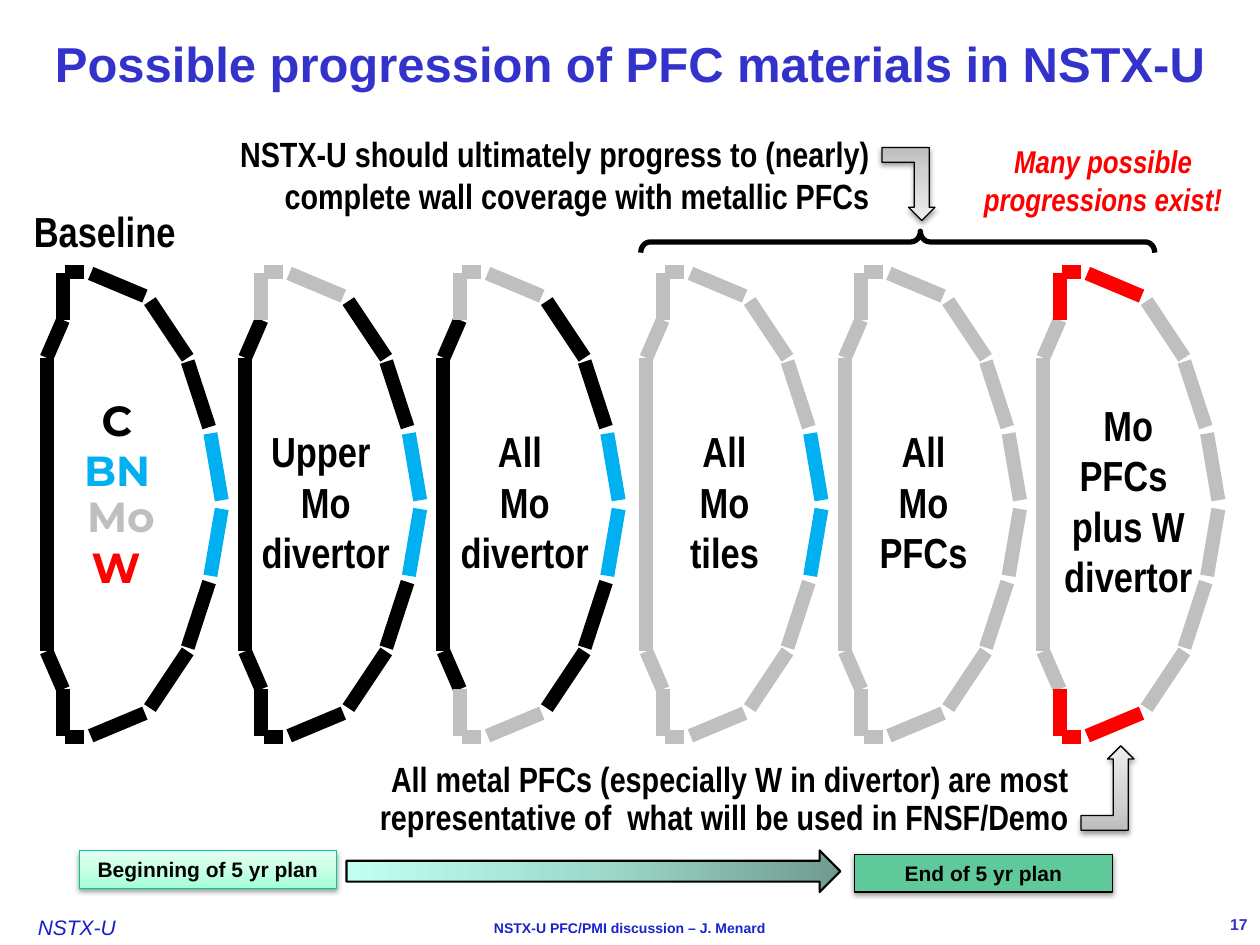
from dataclasses import dataclass

from lxml import etree
from pptx import Presentation
from pptx.dml.color import RGBColor
from pptx.enum.shapes import MSO_CONNECTOR, MSO_SHAPE
from pptx.enum.text import MSO_ANCHOR, PP_ALIGN
from pptx.oxml.ns import qn
from pptx.util import Inches, Pt

LEFT, CENTER, RIGHT = PP_ALIGN.LEFT, PP_ALIGN.CENTER, PP_ALIGN.RIGHT
TOP, MIDDLE = MSO_ANCHOR.TOP, MSO_ANCHOR.MIDDLE
STRAIGHT = MSO_CONNECTOR.STRAIGHT
BENT_ARROW, BRACE = MSO_SHAPE.BENT_UP_ARROW, MSO_SHAPE.RIGHT_BRACE
RECTANGLE, RIGHT_ARROW = MSO_SHAPE.RECTANGLE, MSO_SHAPE.RIGHT_ARROW

BLACK, GRAY, CYAN, RED = "000000", "BFBFBF", "00B0F0", "FF0000"
NARROW, SANS, GEOMETRIC = "Arial Narrow", "Arial", "Montserrat"
MIRROR_SUM = 8.01  # upper y + lower y of mirrored tiles
PANEL_PITCH = 1.575
METAL_GAP = 0.035  # extra space before the all-metal panels


@dataclass
class Label:
    paragraphs: list[str]
    box: tuple[float, float, float, float]
    size: float
    font: str = NARROW
    colors: tuple[str, ...] = (BLACK,)
    align: PP_ALIGN = CENTER
    anchor: MSO_ANCHOR = TOP
    bold: bool = True
    italic: bool = False
    wrap: bool = True
    inset: bool = True
    line_spacing: float | None = None


@dataclass
class Tile:
    start: tuple[float, float]
    end: tuple[float, float]
    zone: str


@dataclass
class Panel:
    wall: str
    upper: str
    lower: str
    midplane: str


# Upper half of the vessel, x measured from the centre column
UPPER_TILES = [
    Tile((0, 2.84), (0.13, 2.54), "wall"),
    Tile((0.13, 2.54), (0.13, 2.17), "divertor"),
    Tile((0.3, 2.16), (0.15, 2.16), "divertor"),
    Tile((0.78, 2.35), (0.35, 2.17), "divertor"),
    Tile((1.12, 2.84), (0.82, 2.39), "wall"),
    Tile((1.29, 3.39), (1.12, 2.87), "wall"),
    Tile((1.39, 3.97), (1.3, 3.44), "midplane"),
]

PANELS = [
    Panel(BLACK, BLACK, BLACK, CYAN),
    Panel(BLACK, GRAY, BLACK, CYAN),
    Panel(BLACK, GRAY, GRAY, CYAN),
    Panel(GRAY, GRAY, GRAY, CYAN),
    Panel(GRAY, GRAY, GRAY, GRAY),
    Panel(GRAY, RED, RED, GRAY),
]

LABELS = [
    # Title and footer
    Label(["Possible progression of PFC materials in NSTX-U"], (0, 0, 10, 1), 28,
          SANS, ("3333CC",), anchor=MIDDLE),
    Label(["NSTX-U"], (0.3, 7.26, 0.87, 0.2), 12, SANS, ("171FC7",), LEFT,
          bold=False, italic=True, inset=False),
    Label(["NSTX-U PFC/PMI discussion – J. Menard"], (2, 7.25, 6, 0.24), 8, SANS, ("1822CD",)),
    Label(["17"], (9.17, 7.25, 0.83, 0.17), 9, SANS, ("3333CC",), RIGHT, MIDDLE),
    # Material key
    Label(["C", "BN"], (0.56, 3.08, 0.74, 0.91), 24, GEOMETRIC, (BLACK, CYAN), wrap=False),
    Label(["Mo"], (0.59, 3.84, 0.74, 0.5), 24, GEOMETRIC, (GRAY,), wrap=False),
    Label(["W"], (0.63, 4.25, 0.54, 0.5), 24, GEOMETRIC, (RED,), wrap=False),
    # Panel names
    Label(["Baseline"], (0.17, 1.58, 1.34, 0.5), 24, align=LEFT, wrap=False),
    Label(["Upper ", "Mo divertor"], (1.92, 3.33, 1.33, 1.31), 24),
    Label(["All ", "Mo divertor"], (3.5, 3.33, 1.33, 1.31), 24),
    Label(["All Mo tiles"], (5.25, 3.33, 1, 1.31), 24),
    Label(["All Mo PFCs"], (6.83, 3.33, 1, 1.31), 24),
    Label(["Mo PFCs ", "plus W divertor"], (8.33, 3.12, 1.25, 1.72), 24),
    # Comments
    Label(["NSTX-U should ultimately progress to (nearly) complete wall coverage with metallic PFCs"],
          (1.75, 1, 5.25, 0.77), 20, align=RIGHT),
    Label(["All metal PFCs (especially W in divertor) are most representative of  what will be "
           "used in FNSF/Demo"], (2.25, 6, 6.33, 0.71), 20, align=RIGHT, line_spacing=0.9),
    Label(["Many possible progressions exist!"], (7.67, 1.08, 2.17, 0.71), 18,
          colors=(RED,), italic=True),
]

SILVER = [(0, "BDBDBD"), (35, "D1D1D1"), (100, "EEEEEE")]
MINT = [(0, "A5FFD6"), (35, "BFFFE2"), (100, "E7FFF3")]
TEAL = [(0, "709A8F"), (50, "9FDBCC"), (100, "C2FFF0")]


def color(value: str) -> RGBColor:
    return RGBColor.from_string(value)


def write_text(shape, label: Label) -> None:
    text_frame = shape.text_frame
    text_frame.text = "\n".join(label.paragraphs)
    text_frame.word_wrap = label.wrap
    text_frame.vertical_anchor = label.anchor
    if not label.inset:
        text_frame.margin_left = text_frame.margin_right = 0
        text_frame.margin_top = text_frame.margin_bottom = 0
    for index, paragraph in enumerate(text_frame.paragraphs):
        paragraph.alignment = label.align
        if label.line_spacing:
            paragraph.line_spacing = label.line_spacing
        for run in paragraph.runs:
            run.font.name, run.font.size = label.font, Pt(label.size)
            run.font.bold, run.font.italic = label.bold, label.italic
            run.font.color.rgb = color(label.colors[index % len(label.colors)])


def add_label(slide, label: Label) -> None:
    write_text(slide.shapes.add_textbox(*map(Inches, label.box)), label)


def add_outlined(slide, kind, box: tuple, line: str, width: float, adjustments: tuple = ()):
    shape = slide.shapes.add_shape(kind, *map(Inches, box))
    shape.shadow.inherit = False
    shape.line.color.rgb = color(line)
    shape.line.width = Pt(width)
    for index, value in enumerate(adjustments):
        shape.adjustments[index] = value
    return shape


def fill_gradient(shape, stops: list[tuple[int, str]], angle: float) -> None:
    shape.fill.gradient()
    shape.fill.gradient_angle = angle
    stop_list = shape._element.spPr.find(qn("a:gradFill")).find(qn("a:gsLst"))
    for stop in list(stop_list):
        stop_list.remove(stop)
    for position, value in stops:
        stop = etree.SubElement(stop_list, qn("a:gs"), pos=str(position * 1000))
        etree.SubElement(stop, qn("a:srgbClr"), val=value)


def add_shadow(shape) -> None:
    effects = shape._element.spPr.find(qn("a:effectLst"))
    shadow = etree.SubElement(effects, qn("a:outerShdw"), blurRad=str(Pt(3.1)),
                              dist=str(Pt(1.6)), dir="5400000", rotWithShape="0")
    shade = etree.SubElement(shadow, qn("a:srgbClr"), val=BLACK)
    etree.SubElement(shade, qn("a:alpha"), val="38000")


def add_tile(slide, left: float, start: tuple, end: tuple, value: str) -> None:
    connector = slide.shapes.add_connector(
        STRAIGHT, Inches(left + start[0]), Inches(start[1]), Inches(left + end[0]), Inches(end[1]))
    connector.line.color.rgb = color(value)
    connector.line.width = Pt(8)
    etree.SubElement(connector._element.spPr, qn("a:effectLst"))


def add_panel(slide, left: float, panel: Panel) -> None:
    add_tile(slide, left, (0, 2.84), (0, MIRROR_SUM - 2.84), panel.wall)
    for divertor, mirrored in ((panel.upper, False), (panel.lower, True)):
        zones = {"wall": panel.wall, "midplane": panel.midplane, "divertor": divertor}
        for tile in UPPER_TILES:
            start, end = ((x, MIRROR_SUM - y if mirrored else y) for x, y in (tile.start, tile.end))
            add_tile(slide, left, start, end, zones[tile.zone])


def add_bent_arrow(slide, box: tuple, points_down: bool) -> None:
    arrow = add_outlined(slide, BENT_ARROW, box, BLACK, 0.75, (0.281, 0.25, 0.25))
    fill_gradient(arrow, SILVER, 90)
    add_shadow(arrow)
    if points_down:
        arrow.rotation = 180
        arrow._element.spPr.xfrm.set("flipH", "1")


def main() -> None:
    presentation = Presentation()
    presentation.slide_width, presentation.slide_height = Inches(10), Inches(7.5)
    slide = presentation.slides.add_slide(presentation.slide_layouts[6])

    # Vessel cross-sections
    for index, panel in enumerate(PANELS):
        left = 0.37 + index * PANEL_PITCH + (METAL_GAP if index >= 3 else 0)
        add_panel(slide, left, panel)

    for label in LABELS:
        add_label(slide, label)

    # Arrows and brace that tie comments to panels
    add_bent_arrow(slide, (7, 1.17, 0.42, 0.58), True)
    add_bent_arrow(slide, (8.58, 5.92, 0.42, 0.67), False)
    brace = add_outlined(slide, BRACE, (7.04, -0.12, 0.17, 4.08), BLACK, 3, (0.443, 0.544))
    brace.fill.background()
    brace.rotation = 270

    # Timeline
    begin_box, end_box = (0.63, 6.75, 2.04, 0.3), (6.78, 6.78, 2.05, 0.3)
    begin = add_outlined(slide, RECTANGLE, begin_box, "00C896", 0.75)
    fill_gradient(begin, MINT, 90)
    end = add_outlined(slide, RECTANGLE, end_box, BLACK, 0.75)
    end.fill.solid()
    end.fill.fore_color.rgb = color("60C99C")
    for shape, text, box in ((begin, "Beginning of 5 yr plan", begin_box),
                             (end, "End of 5 yr plan", end_box)):
        add_shadow(shape)
        write_text(shape, Label([text], box, 12, SANS, anchor=MIDDLE, wrap=False))
    span = add_outlined(slide, RIGHT_ARROW, (2.75, 6.75, 3.92, 0.33), BLACK, 1.25)
    fill_gradient(span, TEAL, 180)

    presentation.save("out.pptx")


if __name__ == "__main__":
    main()
